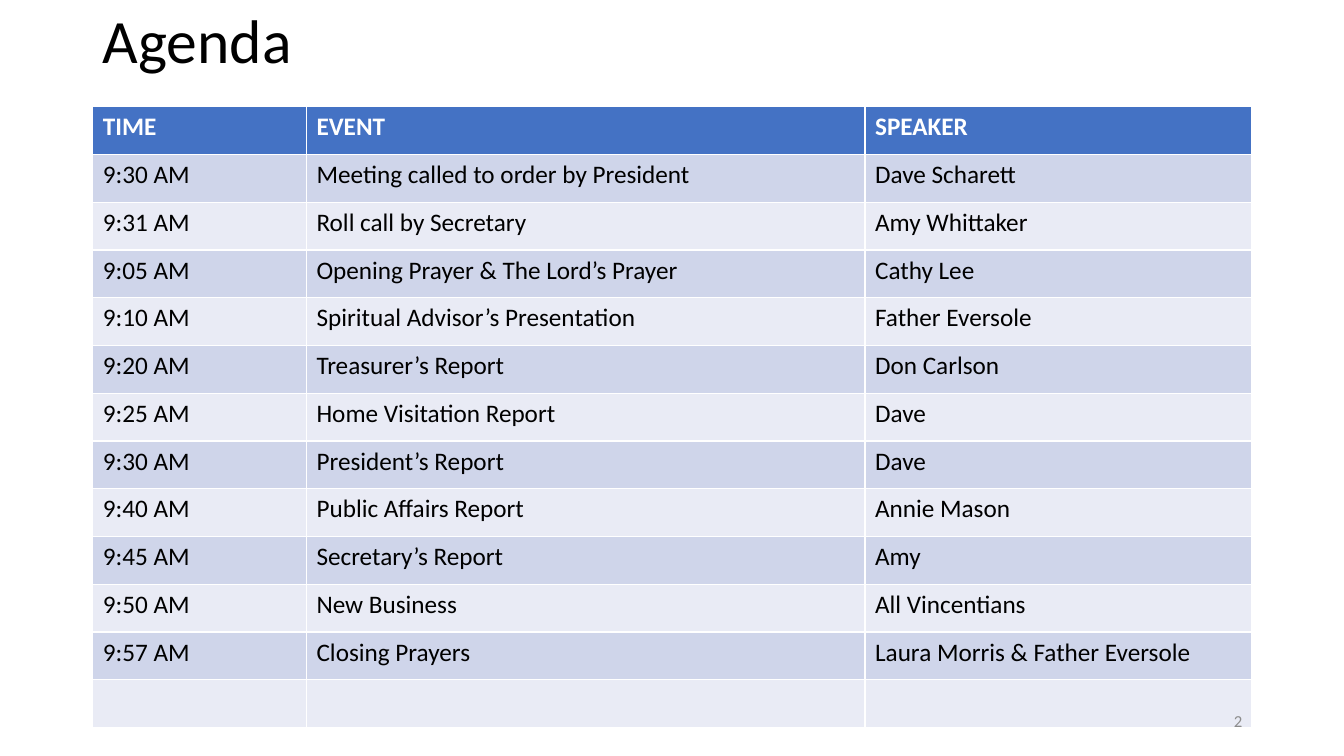
from pptx import Presentation
from pptx.dml.color import RGBColor
from pptx.enum.text import MSO_ANCHOR, PP_ALIGN
from pptx.util import Inches, Pt

MIDDLE = MSO_ANCHOR.MIDDLE
LEFT, RIGHT = PP_ALIGN.LEFT, PP_ALIGN.RIGHT

FONT = "Calibri"
BLACK = RGBColor(0x00, 0x00, 0x00)
WHITE = RGBColor(0xFF, 0xFF, 0xFF)
GRAY = RGBColor(0x8C, 0x8C, 0x8C)
HEADER_BLUE = RGBColor(0x44, 0x72, 0xC4)
BANDS = [RGBColor(0xE9, 0xEB, 0xF5), RGBColor(0xCF, 0xD5, 0xEA)]

MARGIN, CONTENT_WIDTH = 0.92, 11.5
TABLE_TOP, TABLE_HEIGHT = 1.06, 6.16
COLUMN_WIDTHS = [2.12, 5.54, 3.83]

AGENDA = [
    ("TIME", "EVENT", "SPEAKER"),
    ("9:30 AM", "Meeting called to order by President", "Dave Scharett"),
    ("9:31 AM", "Roll call by Secretary", "Amy Whittaker"),
    ("9:05 AM", "Opening Prayer & The Lord’s Prayer", "Cathy Lee"),
    ("9:10 AM", "Spiritual Advisor’s Presentation", "Father Eversole"),
    ("9:20 AM", "Treasurer’s Report", "Don Carlson"),
    ("9:25 AM", "Home Visitation Report", "Dave"),
    ("9:30 AM", "President’s Report", "Dave"),
    ("9:40 AM", "Public Affairs Report", "Annie Mason"),
    ("9:45 AM", "Secretary’s Report", "Amy"),
    ("9:50 AM", "New Business", "All Vincentians"),
    ("9:57 AM", "Closing Prayers", "Laura Morris & Father Eversole"),
    ("", "", ""),
]


def style(paragraph, size, color, bold=False):
    font = paragraph.font
    font.name, font.size, font.bold = FONT, Pt(size), bold
    font.color.rgb = color


def add_label(text, left, top, width, height, size, color, align):
    frame = slide.shapes.add_textbox(
        Inches(left), Inches(top), Inches(width), Inches(height)).text_frame
    frame.word_wrap = True
    frame.vertical_anchor = MIDDLE
    paragraph = frame.paragraphs[0]
    paragraph.text = text
    paragraph.alignment = align
    style(paragraph, size, color)
    return paragraph


prs = Presentation()
prs.slide_width, prs.slide_height = Inches(13.33), Inches(7.5)
slide = prs.slides.add_slide(prs.slide_layouts[6])

# Title
title = add_label("Agenda", MARGIN, 0.01, CONTENT_WIDTH, 0.85, 44, BLACK, LEFT)
title.line_spacing = 0.9

# Agenda table: the default table style draws the white grid lines
schedule = slide.shapes.add_table(
    len(AGENDA), len(COLUMN_WIDTHS), Inches(MARGIN), Inches(TABLE_TOP),
    Inches(CONTENT_WIDTH), Inches(TABLE_HEIGHT)).table
for column, width in zip(schedule.columns, COLUMN_WIDTHS):
    column.width = Inches(width)

for row, entries in enumerate(AGENDA):
    is_header = row == 0
    for col, entry in enumerate(entries):
        cell = schedule.cell(row, col)
        cell.fill.solid()
        cell.fill.fore_color.rgb = HEADER_BLUE if is_header else BANDS[row % 2]
        cell.text = entry
        style(cell.text_frame.paragraphs[0], 18,
              WHITE if is_header else BLACK, is_header)

# Page number, flush with the right edge of the table
add_label("2", MARGIN + CONTENT_WIDTH - 3, 6.95, 3, 0.4, 12, GRAY, RIGHT)

prs.save("out.pptx")
